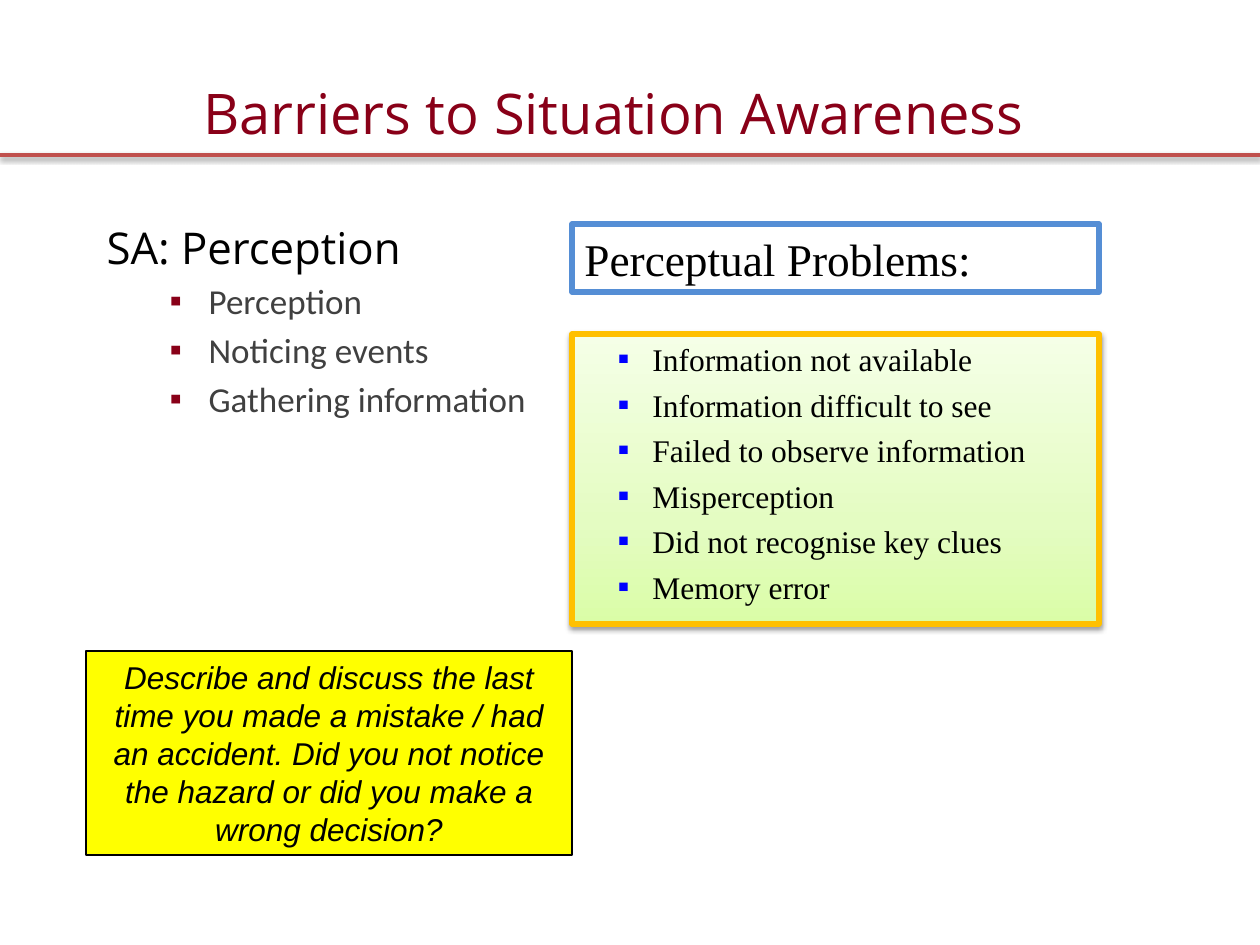
from lxml import etree
from pptx import Presentation
from pptx.dml.color import RGBColor
from pptx.enum import shapes, text
from pptx.oxml import parse_xml
from pptx.oxml.ns import nsdecls, qn
from pptx.util import Emu, Pt

PX = 914400 / 126
COLORS = {
    "maroon": "890018", "rule": "C0504D", "black": "000000", "gray": "404040",
    "blue": "558ED5", "bullet": "0000FF", "amber": "FFC000", "yellow": "FFFF00",
    "green": "DAFDA7", "mid_green": "E4FCC2", "pale_green": "F5FFE7",
}


def px(n):
    return Emu(round(n * PX))


def rgb(name):
    return RGBColor.from_string(COLORS[name])


def place(sp, box):
    sp.left, sp.top, sp.width, sp.height = map(px, box)


def set_bullet(p, char=None, color=None, size=100, margin=0, hang=0):
    pPr = p._p.get_or_add_pPr()
    pPr.set("marL", str(px(margin)))
    pPr.set("indent", str(-px(hang)))
    if char is None:
        etree.SubElement(pPr, qn("a:buNone"))
        return
    clr = etree.SubElement(pPr, qn("a:buClr"))
    etree.SubElement(clr, qn("a:srgbClr"), val=COLORS[color])
    etree.SubElement(pPr, qn("a:buSzPct"), val=str(size * 1000))
    etree.SubElement(pPr, qn("a:buFont"), typeface="Arial")
    etree.SubElement(pPr, qn("a:buChar"), char=char)


def write(tf, words, size, font, color="black", align=text.PP_ALIGN.LEFT,
          italic=False, before=0, level=0, bullet=None):
    """Fill the empty first paragraph, or append a new one."""
    p = tf.paragraphs[0] if not tf.text else tf.add_paragraph()
    p.level, p.alignment, p.space_before = level, align, Pt(before)
    set_bullet(p, **(bullet or {}))
    r = p.add_run()
    r.text = words
    f = r.font
    f.size, f.name, f.italic = Pt(size), font, italic
    f.color.rgb = rgb(color)


def set_shadow(sp):
    sp._element.spPr.append(parse_xml(
        f'<a:effectLst {nsdecls("a")}><a:outerShdw blurRad="40000" dist="20000" '
        'dir="5400000" rotWithShape="0"><a:srgbClr val="000000">'
        '<a:alpha val="38000"/></a:srgbClr></a:outerShdw></a:effectLst>'))


def add_panel(slide, box, line, weight, fill=None, anchor=text.MSO_ANCHOR.MIDDLE):
    sp = slide.shapes.add_shape(shapes.MSO_SHAPE.RECTANGLE, *map(px, box))
    sp.line.color.rgb, sp.line.width = rgb(line), Pt(weight)
    if fill:
        sp.fill.solid()
        sp.fill.fore_color.rgb = rgb(fill)
    else:
        sp.fill.background()
    sp.text_frame.word_wrap = True
    sp.text_frame.vertical_anchor = anchor
    return sp


def set_gradient(sp, stops):
    sp.fill.gradient()
    sp.fill.gradient_angle = 90
    gs_lst = sp._element.spPr.find(qn("a:gradFill")).find(qn("a:gsLst"))
    for gs in list(gs_lst):
        gs_lst.remove(gs)
    for pos, name in stops:
        gs = etree.SubElement(gs_lst, qn("a:gs"), pos=str(pos * 1000))
        etree.SubElement(gs, qn("a:srgbClr"), val=COLORS[name])


def title_region(slide, box, rule_y, rule_width):
    title = slide.shapes.title
    place(title, box)
    tf = title.text_frame
    tf.auto_size = text.MSO_AUTO_SIZE.NONE
    tf.vertical_anchor = text.MSO_ANCHOR.MIDDLE
    write(tf, "Barriers to Situation Awareness", 32, "Open Sans", "maroon",
          align=text.PP_ALIGN.CENTER)
    # Rule under the title
    rule = slide.shapes.add_connector(shapes.MSO_CONNECTOR.STRAIGHT, 0, px(rule_y),
                                      px(rule_width), px(rule_y))
    rule.line.color.rgb, rule.line.width = rgb("rule"), Pt(2)
    set_shadow(rule)


def perception_list(slide, box):
    body = slide.placeholders[1]
    place(body, box)
    tf = body.text_frame
    tf.auto_size = text.MSO_AUTO_SIZE.NONE
    write(tf, "SA: Perception", 25, "Open Sans")
    bullet = dict(char="▪", color="maroon", margin=102, hang=39)
    for item in ("Perception", "Noticing events", "Gathering information"):
        write(tf, item, 20, "Calibri", "gray", before=4, level=1, bullet=bullet)


def problems_region(slide, box):
    left, top, width, height = box
    head_h, list_top = 68, 110
    # Heading
    head = add_panel(slide, (left, top, width, head_h), "blue", 3)
    head.shadow.inherit = False
    write(head.text_frame, "Perceptual Problems:", 25.9, "Times New Roman")
    # List of problems
    panel = add_panel(slide, (left, top + list_top, width, height - list_top),
                      "amber", 3, anchor=text.MSO_ANCHOR.TOP)
    set_gradient(panel, ((0, "green"), (35, "mid_green"), (100, "pale_green")))
    set_shadow(panel)
    bullet = dict(char="■", color="bullet", size=55, margin=68, hang=34)
    for i, item in enumerate((
            "Information not available", "Information difficult to see",
            "Failed to observe information", "Misperception",
            "Did not recognise key clues", "Memory error")):
        write(panel.text_frame, item, 18, "Times New Roman",
              before=4.4 if i else 0, level=1, bullet=bullet)


def question_box(slide, box):
    sp = add_panel(slide, box, "black", 1, fill="yellow")
    sp.shadow.inherit = False
    write(sp.text_frame,
          "Describe and discuss the last time you made a mistake / had an accident. "
          "Did you not notice the hazard or did you make a wrong decision?",
          18, "Arial", align=text.PP_ALIGN.CENTER, italic=True)


def main():
    prs = Presentation()
    prs.slide_width, prs.slide_height = px(1260), px(945)
    slide = prs.slides.add_slide(prs.slide_layouts[1])
    title_region(slide, (94, 70, 1040, 85), 155, 1260)
    perception_list(slide, (94, 214, 1040, 630))
    problems_region(slide, (572, 224, 527, 400))
    question_box(slide, (86, 651, 486, 204))
    prs.save("out.pptx")


if __name__ == "__main__":
    main()
